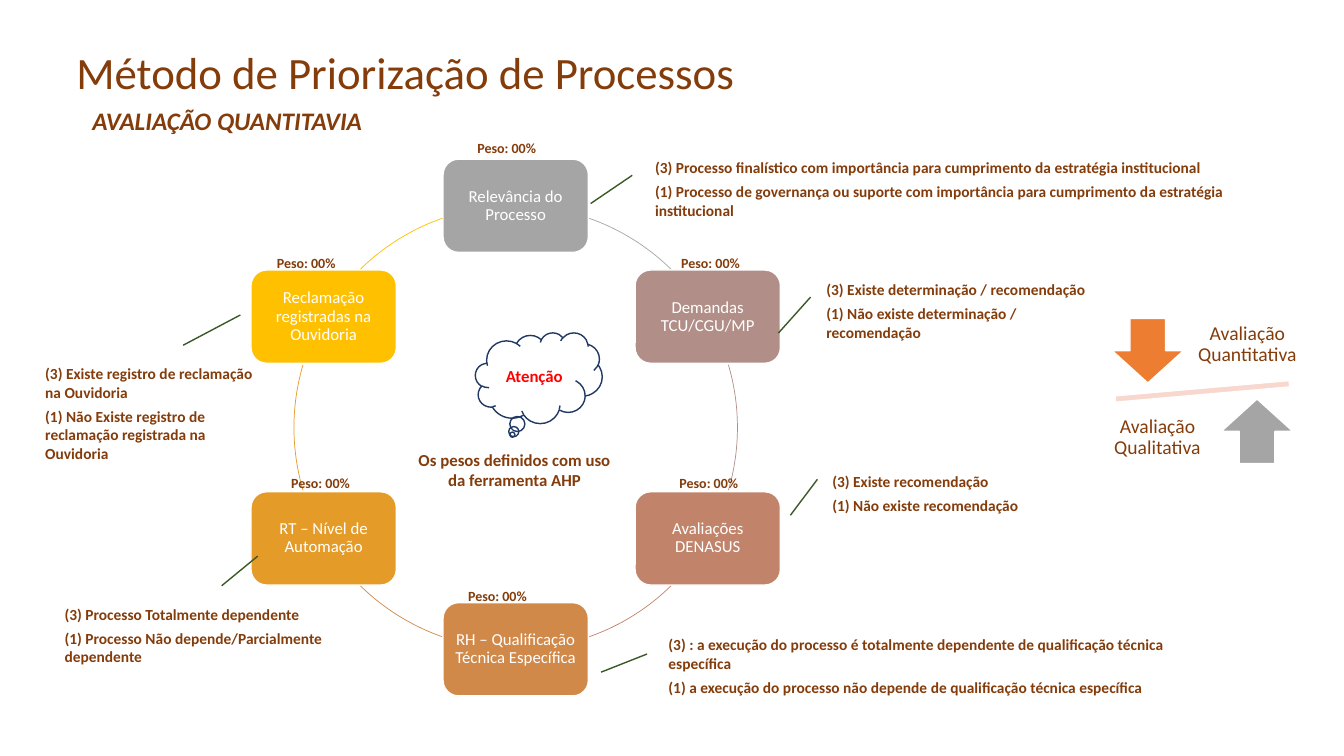
from math import cos, radians, sin

from lxml import etree
from pptx import Presentation
from pptx.dml.color import RGBColor
from pptx.enum.shapes import MSO_SHAPE
from pptx.enum.text import MSO_ANCHOR, PP_ALIGN
from pptx.oxml.ns import qn
from pptx.util import Emu, Inches, Pt

LEFT, CENTER = PP_ALIGN.LEFT, PP_ALIGN.CENTER
TOP, MIDDLE = MSO_ANCHOR.TOP, MSO_ANCHOR.MIDDLE
ROUNDED, ARC = MSO_SHAPE.ROUNDED_RECTANGLE, MSO_SHAPE.ARC
CALLOUT, CLOUD = MSO_SHAPE.LINE_CALLOUT_1_NO_BORDER, MSO_SHAPE.CLOUD_CALLOUT
MINUS, DOWN, UP = MSO_SHAPE.MATH_MINUS, MSO_SHAPE.DOWN_ARROW, MSO_SHAPE.UP_ARROW

BROWN = RGBColor(0x84, 0x3C, 0x0B)
WHITE = RGBColor(0xFF, 0xFF, 0xFF)
RED = RGBColor(0xFF, 0x00, 0x00)
GREEN = RGBColor(0x3A, 0x59, 0x25)
NAVY = RGBColor(0x20, 0x38, 0x64)
GRAY = RGBColor(0xA5, 0xA5, 0xA5)
ORANGE = RGBColor(0xED, 0x7D, 0x31)
PINK = RGBColor(0xF8, 0xD7, 0xCE)
ROSE = RGBColor(0xB1, 0x8F, 0x88)
CLAY = RGBColor(0xC1, 0x84, 0x6B)
COPPER = RGBColor(0xD1, 0x89, 0x4A)
AMBER = RGBColor(0xE5, 0x9B, 0x27)
GOLD = RGBColor(0xFF, 0xC0, 0x00)

FONT = "Calibri"
SLIDE_W, SLIDE_H = Inches(13.333), Inches(7.5)
COLS, ROWS = 160, 90
NODE_W, NODE_H = 17.3, 11.1

# Clockwise from the top: text, colour, offset of the weight from the node's corner
CRITERIA = [
    ("Relevância do Processo", GRAY, (2.9, -2.9)),
    ("Demandas TCU/CGU/MP", ROSE, (4.3, -2.5)),
    ("Avaliações DENASUS", CLAY, (4.1, -2.6)),
    ("RH – Qualificação Técnica Específica", COPPER, (1.8, -2.4)),
    ("RT – Nível de Automação", AMBER, (3.6, -2.6)),
    ("Reclamação registradas na Ouvidoria", GOLD, (1.9, -2.5)),
]
# Start and end of each arc, in degrees after the top of its half circle
ARC_SPANS = [(19.3, 44.5), (73.6, 106.4), (135.5, 160.7)]

# Box, leader line (y1, x1, y2, x2 as shares of the box), anchor, texts
SCORES = [
    ((97.2, 31.9, 34.8, 10.2), (0.34, -0.02, 0.76, -0.13), MIDDLE,
     ["(3) Existe determinação / recomendação",
      "(1) Não existe determinação / recomendação"]),
    ((76.8, 17.4, 76.3, 10.2), (0.34, -0.02, 0.67, -0.085), MIDDLE,
     ["(3) Processo finalístico com importância para cumprimento da estratégia institucional",
      "(1) Processo de governança ou suporte com importância para cumprimento da "
      "estratégia institucional"]),
    ((97.9, 53.6, 29.3, 10.2), (0.34, -0.02, 0.76, -0.13), MIDDLE,
     ["(3) Existe recomendação", "(1) Não existe recomendação"]),
    ((78.4, 74.8, 68.4, 9), (0.34, -0.02, 0.58, -0.1), MIDDLE,
     ["(3) : a execução do processo é totalmente dependente de qualificação técnica específica",
      "(1) a execução do processo não depende de qualificação técnica específica"]),
    ((6.5, 71.4, 39, 8.8), (-0.19, 0.51, -0.59, 0.62), TOP,
     ["(3) Processo Totalmente dependente",
      "(1) Processo Não depende/Parcialmente dependente"]),
    ((4.2, 42.8, 28.4, 10.6), (-0.16, 0.62, -0.5, 0.86), TOP,
     ["(3) Existe registro de reclamação na Ouvidoria",
      "(1) Não Existe registro de reclamação registrada na Ouvidoria"]),
]


def grid(x, y, w, h):
    """Turn columns and rows into slide lengths."""
    return (Emu(int(SLIDE_W * x / COLS)), Emu(int(SLIDE_H * y / ROWS)),
            Emu(int(SLIDE_W * w / COLS)), Emu(int(SLIDE_H * h / ROWS)))


def write(sp, texts, size, color=BROWN, bold=False, italic=False, align=LEFT,
          anchor=TOP, line=None, gap=0, inset=None):
    tf = sp.text_frame
    tf.word_wrap = True
    tf.vertical_anchor = anchor
    if inset is not None:
        tf.margin_left = tf.margin_right = tf.margin_top = tf.margin_bottom = Inches(inset)
    for i, text in enumerate(texts):
        p = tf.add_paragraph() if i else tf.paragraphs[0]
        p.alignment = align
        if line:
            p.line_spacing = line
        if gap:
            p.space_after = Pt(gap)
            p.space_before = Pt(gap if i else 0)
        r = p.add_run()
        r.text = text
        r.font.name, r.font.size = FONT, Pt(size)
        r.font.bold, r.font.italic = bold, italic
        r.font.color.rgb = color


def add_text(s, box, text, size, **style):
    write(s.shapes.add_textbox(*grid(*box)), [text], size, **style)


def add_preset(s, kind, box, fill=None, line=WHITE, width=1):
    sp = s.shapes.add_shape(kind, *grid(*box))
    sp.shadow.inherit = False
    if fill is None:
        sp.fill.background()
    else:
        sp.fill.solid()
        sp.fill.fore_color.rgb = fill
    sp.line.color.rgb = line
    sp.line.width = Pt(width)
    return sp


def add_heading(s, box):
    x, y, w, h = box
    add_text(s, (x, y, w, 7.7), "Método de Priorização de Processos", 32)
    add_text(s, (x - 3.9, y + 7.3, 46.1, 4.8), "AVALIAÇÃO QUANTITAVIA", 18,
             bold=True, italic=True, align=CENTER)


def add_ring(s, box):
    """Criteria every 60 degrees on a circle, joined by arcs."""
    x, y, w, h = box
    for i, (text, color, (dx, dy)) in enumerate(CRITERIA):
        arc = add_preset(s, ARC, box, line=color, width=0.5)
        half, third = divmod(i, 3)
        for k, degrees in enumerate(ARC_SPANS[third]):
            # Arc angles run from three o'clock, in 60000ths of a degree
            arc.adjustments[k] = (degrees + 180 * half - 90) % 360 * 0.6
        angle = radians(60 * i)
        left = x + w / 2 * (1 + sin(angle)) - NODE_W / 2
        top = y + h / 2 * (1 - cos(angle)) - NODE_H / 2
        node = add_preset(s, ROUNDED, (left, top, NODE_W, NODE_H), color)
        write(node, [text], 12, WHITE, align=CENTER, anchor=MIDDLE, line=0.9, inset=0.05)
        add_text(s, (left + dx, top + dy, 13.7, 3.2), "Peso: 00%", 10, bold=True)


def add_score(s, box, leader, anchor, texts):
    sp = add_preset(s, CALLOUT, box, line=GREEN)
    for k, share in enumerate(leader):
        sp.adjustments[k] = share
    write(sp, texts, 11, bold=True, anchor=anchor, gap=2)


def add_balance(s, box):
    """Two opposed arrows around a tilted bar."""
    x, y, w, h = box
    bar = add_preset(s, MINUS, (x, y + 8, w, 3.2), PINK)
    bar.rotation = 355
    add_preset(s, DOWN, (x + 3.4, y + 0.9, 8.5, 7.7), ORANGE)
    add_preset(s, UP, (x + 16.4, y + 10.5, 8.5, 7.7), GRAY)
    for dx, dy, width, text in [(12.2, 0, 14.6, "Avaliação Quantitativa"),
                                (2.3, 11.1, 13, "Avaliação Qualitativa")]:
        add_text(s, (x + dx, y + dy, width, 8), text, 14, align=CENTER,
                 anchor=MIDDLE, line=0.9, inset=0.11)


def add_warning(s, box):
    x, y, w, h = box
    cloud = add_preset(s, CLOUD, (x + 8.6, y, 15.1, 10.8), line=NAVY)
    write(cloud, ["Atenção"], 12, RED, bold=True, align=CENTER, anchor=MIDDLE)
    add_text(s, (x, y + 13.3, w, 6), "Os pesos definidos com uso da ferramenta AHP",
             12, bold=True, align=CENTER)


def main():
    prs = Presentation()
    prs.slide_width, prs.slide_height = SLIDE_W, SLIDE_H
    s = prs.slides.add_slide(prs.slide_layouts[6])
    add_heading(s, (7.9, 4.7, 126.7, 12.1))
    add_ring(s, (35, 24.5, 52.8, 52.8))
    for score in SCORES:
        add_score(s, *score)
    add_balance(s, (129, 37, 28.3, 19.2))
    add_warning(s, (48, 39.6, 26.5, 19.3))
    # Presets carry a theme style whose effects are not wanted
    for style in s.shapes.element.iter(qn("p:style")):
        etree.SubElement(style.getparent().find(qn("p:spPr")), qn("a:effectLst")) \
            if style.getparent().find(qn("p:spPr")).find(qn("a:effectLst")) is None else None
    prs.save("out.pptx")


if __name__ == "__main__":
    main()
